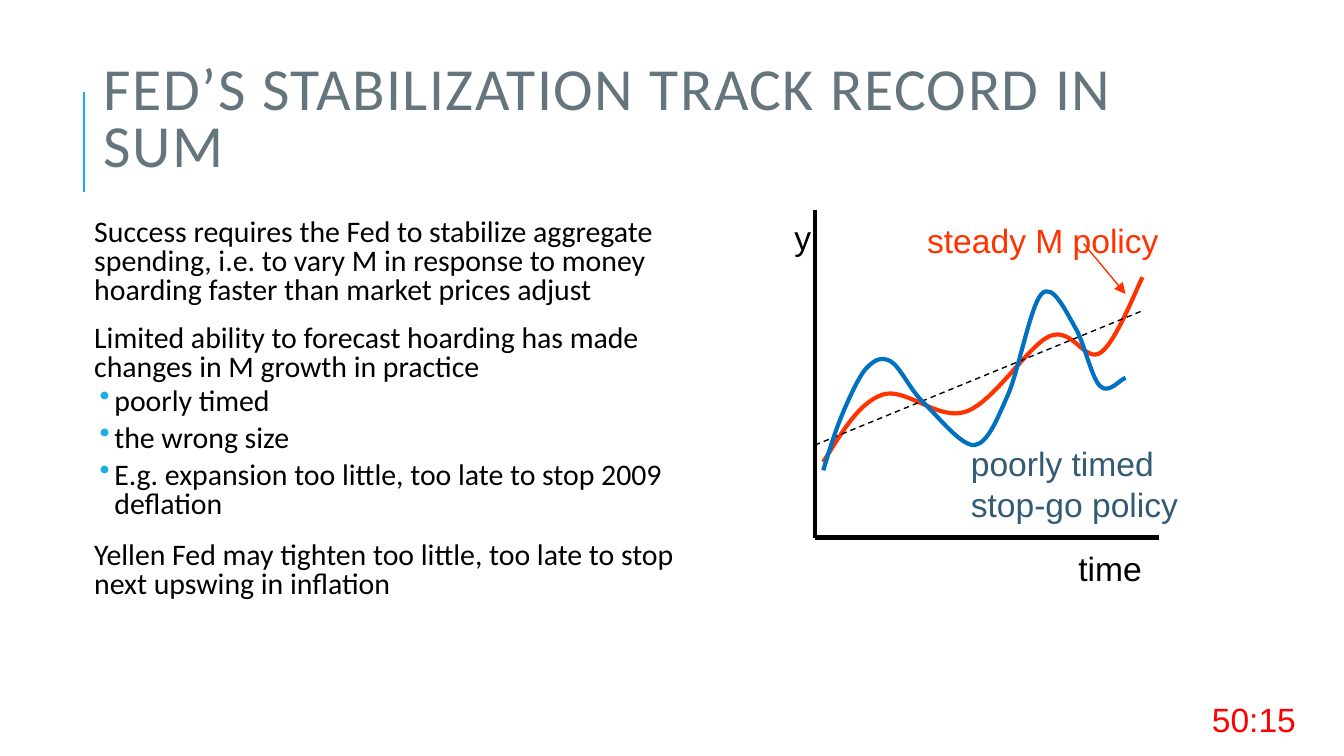
from lxml import etree
from pptx import Presentation
from pptx.dml.color import RGBColor
from pptx.enum.dml import MSO_LINE
from pptx.enum.shapes import MSO_CONNECTOR
from pptx.enum.text import MSO_ANCHOR
from pptx.oxml.ns import qn
from pptx.util import Inches, Pt

STRAIGHT = MSO_CONNECTOR.STRAIGHT
DASH = MSO_LINE.DASH
MIDDLE, TOP = MSO_ANCHOR.MIDDLE, MSO_ANCHOR.TOP

COLS, ROWS = 160, 90
U = Inches(10) // COLS
FINE = 100

BLACK, ACCENT, TITLE = "000000", "1CADE4", "65757D"
STEADY, STOP_GO, STOP_GO_TEXT, TIMER = "FF3300", "0070C0", "335B74", "FF0000"

BODY = {"line_spacing": 0.8, "space_before": Pt(9), "space_after": Pt(1.5)}
ITEM = {"line_spacing": 0.8, "space_before": Pt(1.5), "space_after": Pt(3), "level": 1}
POINTS = [
    ("Success requires the Fed to stabilize aggregate spending, i.e. to vary M "
     "in response to money hoarding faster than market prices adjust", BODY),
    ("Limited ability to forecast hoarding has made changes in M growth in practice", BODY),
    ("poorly timed", ITEM),
    ("the wrong size", ITEM),
    ("E.g. expansion too little, too late to stop 2009 deflation", ITEM),
    ("Yellen Fed may tighten too little, too late to stop next upswing in inflation", BODY),
]

STEADY_CURVE = [
    (1, 30), (3.2, 26.5), (5.2, 23), (8, 22), (10.8, 21), (14.7, 25.2),
    (18, 24), (21.4, 22.8), (25.4, 16.1), (28, 15), (30.7, 13.9),
    (32.1, 18.2), (34, 17), (35.8, 15.8), (38.2, 9.6), (39, 8),
]
STOP_GO_CURVE = [
    (1, 31), (1.6, 29.1), (2.2, 27), (3, 25), (3.8, 23), (5.1, 20.1),
    (6, 19), (7, 17.9), (7.8, 17.4), (9, 18), (10.2, 18.7), (11.3, 21.4),
    (13, 23), (14.7, 24.6), (17.4, 28.1), (19, 28), (20.6, 27.8),
    (21.7, 24.9), (23, 22), (24.3, 19), (25.7, 11.3), (27, 10),
    (28.3, 8.6), (29.9, 12.1), (31, 14), (32.1, 15.8), (32.9, 20),
    (34, 21), (35, 22), (36.4, 20.1), (37, 20),
]


def rgb(color):
    return RGBColor.from_string(color)


def grid(*values):
    return [round(v * U) for v in values]


def set_format(target, values):
    for name, value in values.items():
        setattr(target, name, value)


def add_text(slide, box, paragraphs, size, color, font="Arial",
             inset=0.1, wrap=True, anchor=TOP):
    tf = slide.shapes.add_textbox(*grid(*box)).text_frame
    set_format(tf, {"word_wrap": wrap, "vertical_anchor": anchor,
                    "margin_left": Inches(inset), "margin_right": Inches(inset)})
    for i, (text, layout) in enumerate(paragraphs):
        p = tf.paragraphs[0] if i == 0 else tf.add_paragraph()
        set_format(p, layout)
        r = p.add_run()
        r.text = text
        set_format(r.font, {"name": font, "size": Pt(size)})
        r.font.color.rgb = rgb(color)
    return tf


def add_line(slide, start, end, color, width, dash=None, arrow=False):
    sp = slide.shapes.add_connector(STRAIGHT, *grid(*start, *end))
    set_format(sp.line, {"width": Pt(width), "dash_style": dash})
    sp.line.color.rgb = rgb(color)
    if arrow:
        etree.SubElement(sp.line._get_or_add_ln(), qn("a:tailEnd"), type="triangle")
    etree.SubElement(sp._element.spPr, qn("a:effectLst"))


def add_curve(slide, origin, points, color):
    fine = [(round(x * FINE), round(y * FINE)) for x, y in points]
    builder = slide.shapes.build_freeform(*fine[0], scale=U / FINE)
    builder.add_line_segments(fine[1:], close=False)
    sp = builder.convert_to_shape(*grid(*origin))
    segments = list(sp._element.iter(qn("a:lnTo")))
    for i in range(0, len(segments), 3):
        bezier = etree.Element(qn("a:cubicBezTo"))
        segments[i].addprevious(bezier)
        for segment in segments[i:i + 3]:
            bezier.append(segment[0])
            segment.getparent().remove(segment)
    sp.shadow.inherit = False
    sp.fill.background()
    sp.line.width = Pt(2.25)
    sp.line.color.rgb = rgb(color)


def draw_title(slide, left, top, width, height):
    add_line(slide, (left, top + 18.2), (left, top + 6.2), ACCENT, 1.5)
    tf = add_text(slide, (left + 0.8, top, width, height),
                  [("FED’S STABILIZATION TRACK RECORD IN SUM", {"line_spacing": 0.8})],
                  32, TITLE, "Calibri", anchor=MIDDLE)
    tf.paragraphs[0].runs[0].font._element.set("spc", "80")


def draw_points(slide, *box):
    tf = add_text(slide, box, POINTS, 16, BLACK, "Calibri", inset=0.05)
    for p in tf.paragraphs:
        pPr = p._p.get_or_add_pPr()
        pPr.set("marL", str(Inches(0.22 if p.level else 0.07)))
        pPr.set("indent", str(Inches(-0.11 if p.level else 0)))
        if p.level:
            color = etree.SubElement(pPr, qn("a:buClr"))
            etree.SubElement(color, qn("a:srgbClr"), val=ACCENT)
            etree.SubElement(pPr, qn("a:buChar"), char="•")


def draw_graph(slide, left, top, width, height):
    def at(x, y):
        return left + x, top + y

    def label(x, y, w, lines, color):
        add_text(slide, (*at(x, y), w, 6.4 * len(lines)),
                 [(line, {}) for line in lines], 18, color, wrap=False)

    add_line(slide, at(0, 0), at(0, height), BLACK, 2.25)
    add_line(slide, at(0, height), at(width, height), BLACK, 2.25)
    add_curve(slide, at(0, 0), STEADY_CURVE, STEADY)
    add_line(slide, at(0, 28), at(39, 12), BLACK, 0.75, dash=DASH)
    label(11.8, 0.4, 31, ["steady M policy"], STEADY)
    label(17, 27, 28.2, ["poorly timed", "stop-go policy"], STOP_GO_TEXT)
    add_line(slide, at(32, 4), at(37, 10), STEADY, 0.75, arrow=True)
    label(29.8, 39.5, 10.8, ["time"], BLACK)
    label(-4, 0, 5.2, ["y"], BLACK)
    add_curve(slide, at(0, 0), STOP_GO_CURVE, STOP_GO)


def draw_timer(slide, *box):
    add_text(slide, box, [("50:15", {})], 18, TIMER)


def main():
    prs = Presentation()
    set_format(prs, {"slide_width": COLS * U, "slide_height": ROWS * U})
    slide = prs.slides.add_slide(prs.slide_layouts[6])
    draw_title(slide, 10, 4.7, 138.5, 19.6)
    draw_points(slide, 9.3, 25.4, 77.8, 54.6)
    draw_graph(slide, 97, 25, 41, 39)
    draw_timer(slide, 142.7, 82.4, 14.7, 6.4)
    prs.save("out.pptx")


if __name__ == "__main__":
    main()
